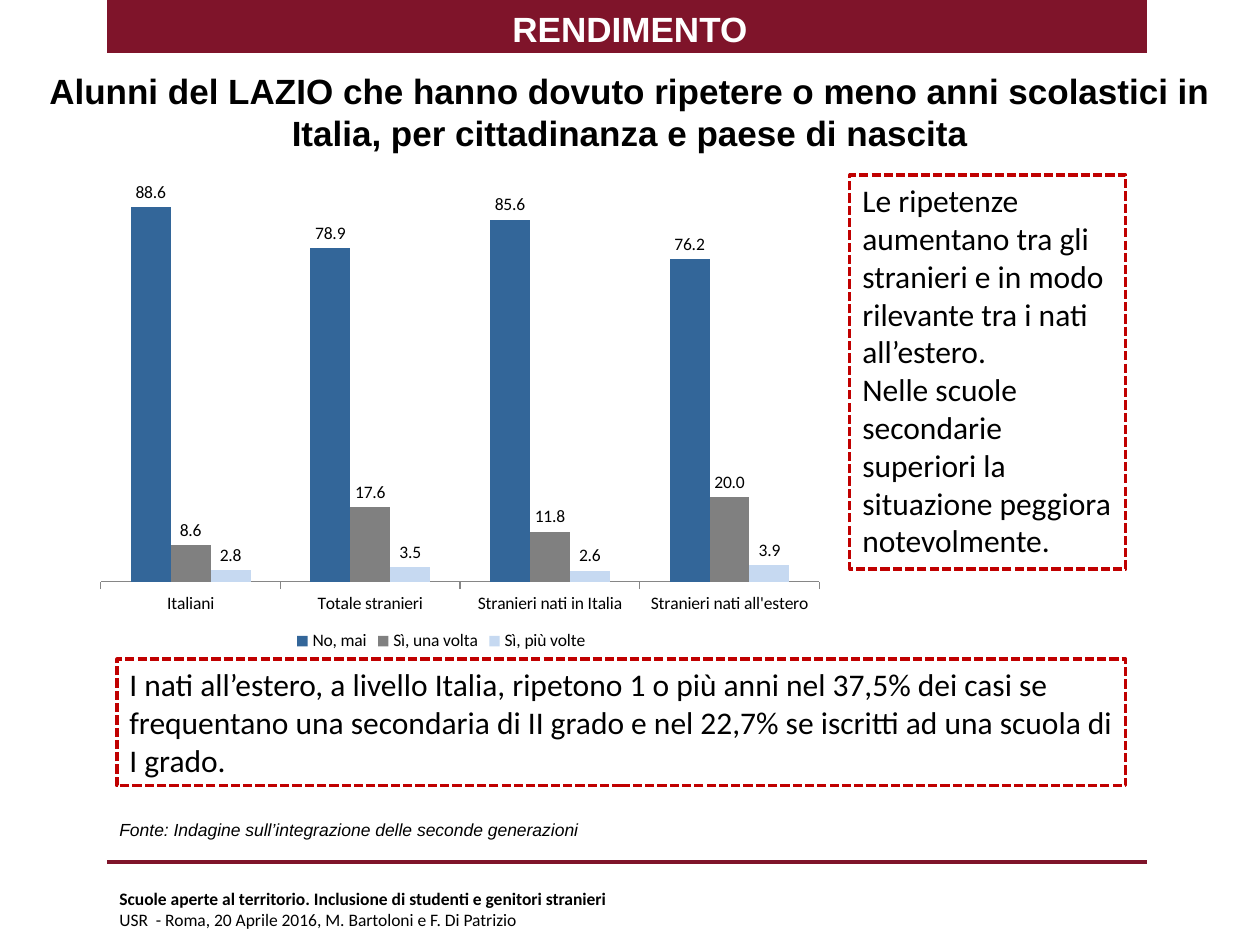
from lxml.etree import SubElement
from pptx import Presentation
from pptx.chart.data import CategoryChartData
from pptx.dml.color import RGBColor
from pptx.enum.chart import XL_CHART_TYPE, XL_LABEL_POSITION, XL_LEGEND_POSITION, XL_TICK_MARK
from pptx.enum.dml import MSO_LINE
from pptx.enum.shapes import MSO_CONNECTOR, MSO_SHAPE
from pptx.enum.text import MSO_ANCHOR, PP_ALIGN
from pptx.oxml.ns import qn
from pptx.util import Emu, Pt

PX = 914400 / 126
SLIDE_SIZE = (1260, 945)
MAROON, RED, BLACK, WHITE, GRAY = "7F142A", "C00000", "000000", "FFFFFF", "868686"

SECTION = "RENDIMENTO"
TITLE = ("Alunni del LAZIO che hanno dovuto ripetere o meno anni scolastici in Italia, "
         "per cittadinanza e paese di nascita")
SIDE_NOTE = [
    "Le ripetenze aumentano tra gli stranieri e in modo rilevante tra i nati all’estero.",
    "Nelle scuole secondarie superiori la situazione peggiora notevolmente.",
]
BOTTOM_NOTE = [
    "I nati all’estero, a livello Italia, ripetono 1 o più anni nel 37,5% dei casi se "
    "frequentano una secondaria di II grado e nel 22,7% se iscritti ad una scuola di I grado.",
]
SOURCE = "Fonte: Indagine sull’integrazione delle seconde generazioni"
EVENT = "Scuole aperte al territorio. Inclusione di studenti e genitori stranieri"
PLACE = "USR  - Roma, 20 Aprile 2016, M. Bartoloni e F. Di Patrizio"

CATEGORIES = ["Italiani", "Totale stranieri", "Stranieri nati in Italia", "Stranieri nati all'estero"]
SERIES = [
    ("No, mai", [88.6, 78.9, 85.6, 76.2], "336699"),
    ("Sì, una volta", [8.6, 17.6, 11.8, 20.0], "808080"),
    ("Sì, più volte", [2.8, 3.5, 2.6, 3.9], "C6D9F1"),
]
PLOT_AREA = {"x": 0.05, "y": 0.06, "w": 0.95, "h": 0.8}


def px(*lengths):
    return [Emu(round(length * PX)) for length in lengths]


def color(code):
    return RGBColor.from_string(code)


def set_font(font, size, name="Calibri", ink=BLACK, bold=False, italic=False):
    font.size, font.name, font.bold, font.italic = Pt(size), name, bold, italic
    font.color.rgb = color(ink)


def write(box, paragraphs, align=PP_ALIGN.LEFT, anchor=MSO_ANCHOR.TOP, **style):
    frame = box.text_frame
    frame.word_wrap = True
    frame.vertical_anchor = anchor
    for index, text in enumerate(paragraphs):
        para = frame.paragraphs[0] if index == 0 else frame.add_paragraph()
        para.alignment = align
        span = para.add_run()
        span.text = text
        set_font(span.font, **style)
    return box


def add_text(page, area, text, **style):
    return write(page.shapes.add_textbox(*px(*area)), [text], **style)


def add_rectangle(page, area):
    shape = page.shapes.add_shape(MSO_SHAPE.RECTANGLE, *px(*area))
    shape.shadow.inherit = False
    return shape


def add_note(page, area, paragraphs):
    box = add_rectangle(page, area)
    box.fill.background()
    box.line.color.rgb = color(RED)
    box.line.width = Pt(1.75)
    box.line.dash_style = MSO_LINE.SQUARE_DOT
    box.line.dash_style = MSO_LINE.DASH
    box.line._ln.find(qn("a:prstDash")).set("val", "sysDash")
    write(box, paragraphs, size=18)


def add_frame(page):
    band = add_rectangle(page, (107, 0, 1040, 53))
    band.fill.solid()
    band.fill.fore_color.rgb = color(MAROON)
    band.line.fill.background()
    rule = page.shapes.add_connector(MSO_CONNECTOR.STRAIGHT, *px(107, 862, 1147, 862))
    rule.line.color.rgb = color(MAROON)
    rule.line.width = Pt(2)
    SubElement(rule._element.spPr, qn("a:effectLst"))


def place_plot(chart):
    plot_area = chart._chartSpace.chart.plotArea
    layout = plot_area.find(qn("c:layout"))
    if layout is None:
        layout = SubElement(plot_area, qn("c:layout"))
        plot_area.insert(0, layout)
    manual = SubElement(layout, qn("c:manualLayout"))
    settings = {"layoutTarget": "inner", "xMode": "edge", "yMode": "edge", **PLOT_AREA}
    for tag, value in settings.items():
        SubElement(manual, qn(f"c:{tag}")).set("val", str(value))


def add_bars(page, area):
    data = CategoryChartData(number_format="#,##0.0")
    data.categories = CATEGORIES
    for name, values, _ in SERIES:
        data.add_series(name, values)
    chart = page.shapes.add_chart(XL_CHART_TYPE.COLUMN_CLUSTERED, *px(*area), data).chart
    set_font(chart.font, 10)
    chart.has_title = False
    chart.has_legend = True
    chart.legend.position = XL_LEGEND_POSITION.BOTTOM
    chart.legend.include_in_layout = False
    value_axis = chart.value_axis
    value_axis.minimum_scale, value_axis.maximum_scale = 0, 100
    value_axis.has_major_gridlines = False
    value_axis.visible = False
    chart.category_axis.major_tick_mark = XL_TICK_MARK.OUTSIDE
    chart.category_axis.format.line.color.rgb = color(GRAY)
    plot = chart.plots[0]
    plot.gap_width, plot.overlap, plot.vary_by_categories = 150, 0, False
    for series, (_, _, fill) in zip(plot.series, SERIES):
        series.format.fill.solid()
        series.format.fill.fore_color.rgb = color(fill)
        labels = series.data_labels
        labels.show_value = True
        labels.number_format = "#,##0.0"
        labels.number_format_is_linked = False
        labels.position = XL_LABEL_POSITION.OUTSIDE_END
    place_plot(chart)


def main():
    deck = Presentation()
    deck.slide_width, deck.slide_height = px(*SLIDE_SIZE)
    page = deck.slides.add_slide(deck.slide_layouts[6])
    heading = {"size": 20, "name": "Arial", "bold": True,
               "align": PP_ALIGN.CENTER, "anchor": MSO_ANCHOR.MIDDLE}
    add_frame(page)
    add_text(page, (0, 46, 1260, 131), TITLE, **heading)
    add_text(page, (107, 813, 630, 34), SOURCE, size=10, name="Arial", italic=True)
    add_text(page, (0, -1, 1260, 59), SECTION, ink=WHITE, **heading)
    add_note(page, (850, 175, 276, 394), SIDE_NOTE)
    add_bars(page, (63, 127, 757, 529))
    add_note(page, (117, 659, 1009, 127), BOTTOM_NOTE)
    footer = add_text(page, (107, 882, 1153, 55), EVENT, size=10, bold=True)
    para = footer.text_frame.paragraphs[0]
    para.add_line_break()
    span = para.add_run()
    span.text = PLACE
    set_font(span.font, 10)
    deck.save("out.pptx")


if __name__ == "__main__":
    main()
